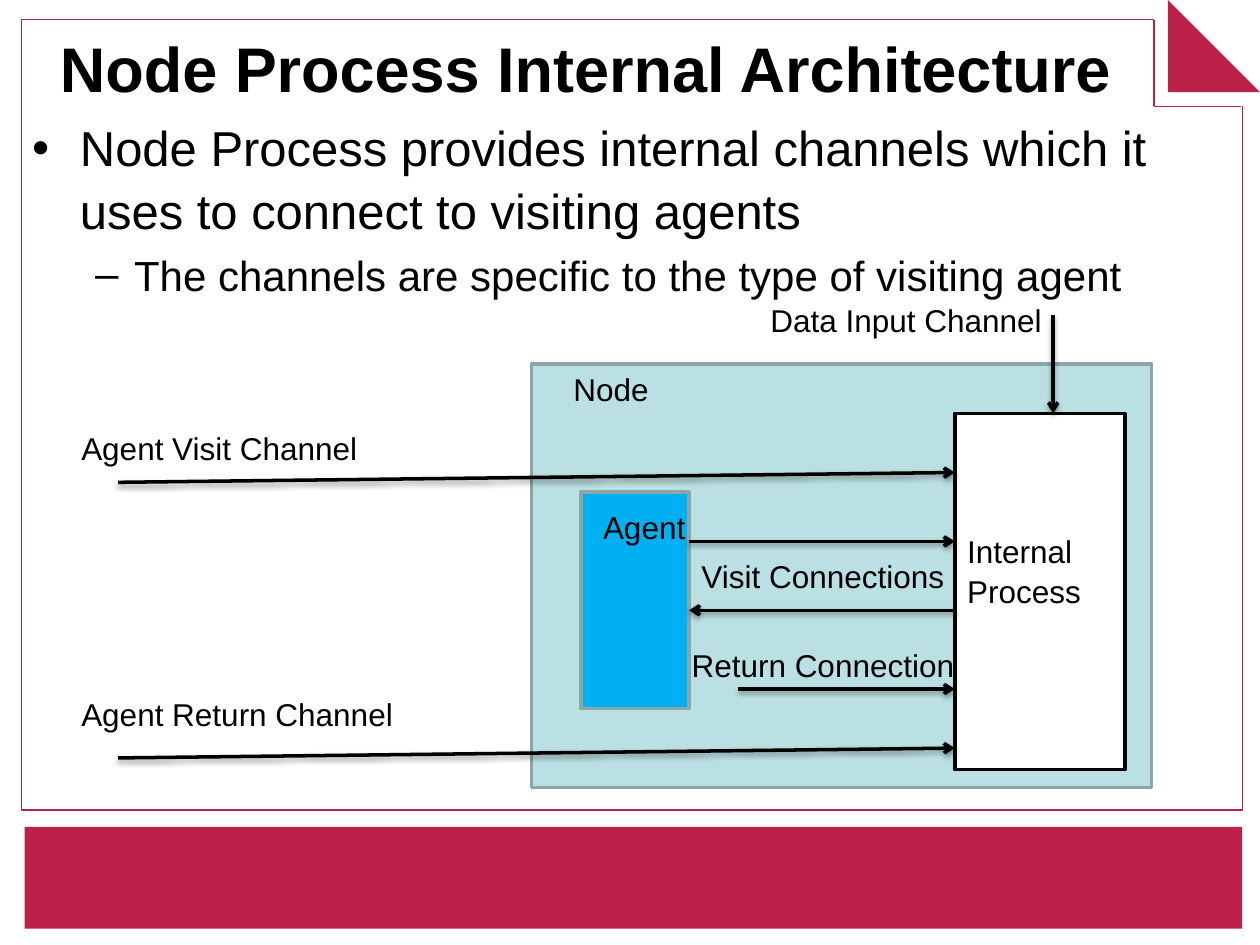
from collections import namedtuple

from lxml.etree import SubElement
from pptx import Presentation
from pptx.dml.color import RGBColor
from pptx.enum.shapes import MSO_CONNECTOR as Connector, MSO_SHAPE as Shape
from pptx.enum.text import MSO_ANCHOR as Anchor, MSO_AUTO_SIZE as AutoSize, PP_ALIGN as Align
from pptx.oxml.ns import qn
from pptx.util import Inches, Pt

COLUMNS, ROWS = 128, 96
WIDTH, HEIGHT = Inches(10), Inches(7.5)
CRIMSON, WHITE, BLACK = "BC2149", "FFFFFF", "000000"
TEAL, SKY, SLATE = "BBE0E3", "00B0F0", "8AA6A8"

Box = namedtuple("Box", "left top width height")


def color(code):
    """Turn a hex string into a colour."""
    return RGBColor.from_string(code)


def within(region, left, top, width=0, height=0):
    """Shift a box by the corner of its region."""
    return Box(region.left + left, region.top + top, width, height)


def lengths(box):
    """Convert grid columns and rows to slide lengths."""
    across, down = WIDTH / COLUMNS, HEIGHT / ROWS
    return [int(n * unit) for n, unit in zip(box, (across, down, across, down))]


def write(para, text, size=18, bold=False, align=Align.LEFT, spacing=None, before=0):
    """Put formatted text in a paragraph."""
    para.text = text
    para.alignment = align
    para.space_before = Pt(before)
    if spacing:
        para.line_spacing = spacing
    for span in para.runs:
        span.font.name = "Arial"
        span.font.size = Pt(size)
        span.font.bold = bold
        span.font.color.rgb = color(BLACK)


def add_bullet(para, mark, margin, indent):
    """Give a paragraph a bullet with a hanging indent."""
    props = para._p.get_or_add_pPr()
    props.set("marL", str(Inches(margin)))
    props.set("indent", str(-Inches(indent)))
    SubElement(props, qn("a:buFont"), typeface="Arial")
    SubElement(props, qn("a:buChar"), char=mark)


def add_block(page, box, fill, line=None, weight=2, kind=Shape.RECTANGLE):
    """Draw a filled preset shape."""
    block = page.shapes.add_shape(kind, *lengths(box))
    block.shadow.inherit = False
    block.fill.solid()
    block.fill.fore_color.rgb = color(fill)
    if line:
        block.line.color.rgb = color(line)
        block.line.width = Pt(weight)
    else:
        block.line.fill.background()
    return block


def add_line(page, start, end, code, weight, arrow=False):
    """Draw a straight line, or an arrow with a soft shadow."""
    left, top, right, bottom = lengths(Box(*start, *end))
    line = page.shapes.add_connector(Connector.STRAIGHT, left, top, right, bottom)
    line.line.color.rgb = color(code)
    line.line.width = Pt(weight)
    props = line._element.spPr
    effects = SubElement(props, qn("a:effectLst"))
    if arrow:
        SubElement(props.find(qn("a:ln")), qn("a:tailEnd"), type="arrow")
        shadow = SubElement(effects, qn("a:outerShdw"), blurRad=str(Pt(3.1)),
                            dist=str(Pt(1.6)), dir="5400000", rotWithShape="0")
        shade = SubElement(shadow, qn("a:srgbClr"), val=BLACK)
        SubElement(shade, qn("a:alpha"), val="38000")


def add_label(page, box, text):
    """Place a one-line label."""
    frame = page.shapes.add_textbox(*lengths(box)).text_frame
    frame.word_wrap = False
    frame.auto_size = AutoSize.SHAPE_TO_FIT_TEXT
    write(frame.paragraphs[0], text)


def add_frame(page, box):
    """Draw the border, its notched corner and the bottom bar."""
    notch, fold, edge = 115.05, 9.35, 8.8
    add_block(page, within(box, 0, 0, 124, 80.3), WHITE, CRIMSON, 0.75)
    add_block(page, within(box, notch, -2, 10.75, 10.75), WHITE)
    add_block(page, within(box, 116.45, -2, fold, fold), CRIMSON, kind=Shape.RIGHT_TRIANGLE)
    add_block(page, within(box, 0.3, 82, 123.7, 10.35), CRIMSON)
    corner = within(box, notch, edge)[:2]
    for end in (within(box, notch, 0), within(box, notch + edge, edge)):
        add_line(page, corner, end[:2], CRIMSON, 0.75)


def add_title(page, box, text):
    """Place the title placeholder."""
    title = page.shapes.title
    title.left, title.top, title.width, title.height = lengths(box)
    frame = title.text_frame
    frame.vertical_anchor = Anchor.MIDDLE
    frame.auto_size = AutoSize.NONE
    write(frame.paragraphs[0], text, size=36, bold=True, align=Align.CENTER)


def add_body(page, box):
    """Write the bulleted text."""
    frame = page.shapes.add_textbox(*lengths(box)).text_frame
    frame.word_wrap = True
    lead, detail = frame.paragraphs[0], frame.add_paragraph()
    add_bullet(lead, "•", 0.38, 0.38)
    write(lead, "Node Process provides internal channels which it uses to connect "
          "to visiting agents", size=28, spacing=1.06)
    add_bullet(detail, "–", 0.81, 0.31)
    write(detail, "The channels are specific to the type of visiting agent",
          size=24, spacing=1.06, before=4)


def add_process(page, box):
    """Draw the internal process with its caption."""
    frame = add_block(page, box, WHITE, BLACK).text_frame
    frame.word_wrap = True
    frame.vertical_anchor = Anchor.TOP
    frame.margin_top = Inches(0.93)
    write(frame.paragraphs[0], "Internal\vProcess", spacing=1.05)


def add_diagram(page, box):
    """Draw the node, its agent and process, and the channels."""
    agent_edge, process_edge, source = 63, 90, 5
    add_block(page, within(box, 47, 7, 63, 43), TEAL, SLATE)
    add_process(page, within(box, process_edge, 12, 17.3, 36.2))
    add_block(page, within(box, 52, 20, 11, 22), SKY, SLATE)
    arrows = [
        ((source, 47), (process_edge, 46)),
        ((source, 19), (process_edge, 18)),
        ((100, 2), (100, 12)),
        ((agent_edge, 25), (process_edge, 25)),
        ((68, 40), (process_edge, 40)),
        ((process_edge, 32), (agent_edge, 32)),
    ]
    for start, end in arrows:
        add_line(page, within(box, *start)[:2], within(box, *end)[:2], BLACK, 2, arrow=True)
    labels = [
        ("Node", 50, 7, 10.2),
        ("Agent Visit Channel", 0, 13, 30.8),
        ("Agent Return Channel", 0, 40, 34.6),
        ("Data Input Channel", 70, 0, 30.5),
        ("Agent", 53, 21, 11),
        ("Visit Connections", 63, 26, 27.5),
        ("Return Connection", 62, 35, 29.6),
    ]
    for text, left, top, width in labels:
        add_label(page, within(box, left, top, width, 5.1), text)


def main():
    """Build and save the deck."""
    deck = Presentation()
    deck.slide_width, deck.slide_height = WIDTH, HEIGHT
    page = deck.slides.add_slide(deck.slide_layouts[5])
    add_frame(page, Box(2.2, 2, 124, 92.35))
    title = page.shapes.title._element
    page.shapes._spTree.append(title)
    add_title(page, Box(2.5, 2.7, 114, 8.3), "Node Process Internal Architecture")
    add_body(page, Box(2, 11, 124, 22))
    add_diagram(page, Box(7, 30, 110, 50))
    deck.save("out.pptx")


if __name__ == "__main__":
    main()
